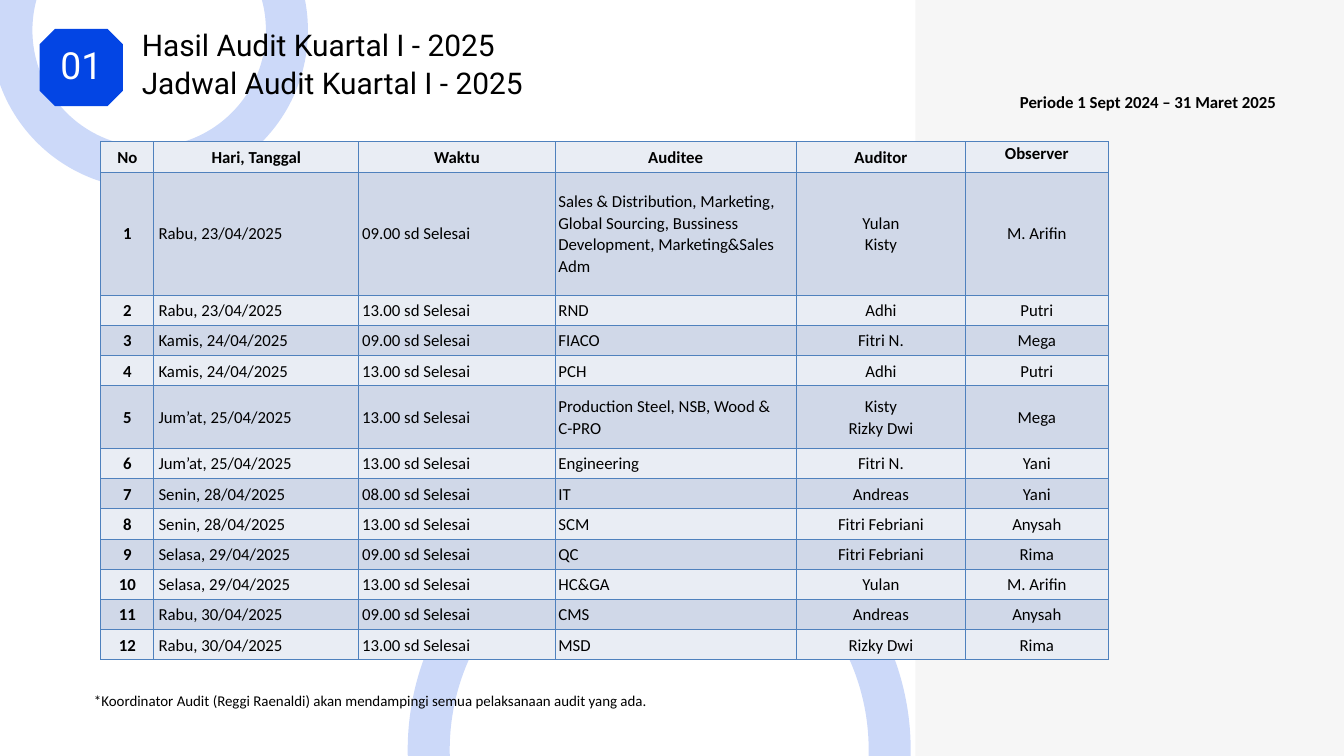
import pptx
import pptx.dml.color
import pptx.enum.shapes
import pptx.enum.text
import pptx.oxml
import pptx.oxml.ns
import pptx.util

COLUMNS, ROWS = 20, 11.25  # grid of one-inch cells

COLORS = {
    "blue": "0345E4",
    "panel": "F6F6F6",
    "white": "FFFFFF",
    "black": "000000",
    "border": "4F81BD",
    "light": "E9EDF4",
    "dark": "D0D8E8",
}
LEFT = pptx.enum.text.PP_ALIGN.LEFT
CENTER = pptx.enum.text.PP_ALIGN.CENTER
TOP = pptx.enum.text.MSO_ANCHOR.TOP
MIDDLE = pptx.enum.text.MSO_ANCHOR.MIDDLE
SHAPES = pptx.enum.shapes.MSO_SHAPE

HEADERS = ["No", "Hari, Tanggal", "Waktu", "Auditee", "Auditor", "Observer"]
SCHEDULE = [
    ("Rabu, 23/04/2025", "09.00",
     "Sales & Distribution, Marketing, Global Sourcing, Bussiness Development, Marketing&Sales Adm",
     "Yulan\nKisty", "M. Arifin"),
    ("Rabu, 23/04/2025", "13.00", "RND", "Adhi", "Putri"),
    ("Kamis, 24/04/2025", "09.00", "FIACO", "Fitri N.", "Mega"),
    ("Kamis, 24/04/2025", "13.00", "PCH", "Adhi", "Putri"),
    ("Jum’at, 25/04/2025", "13.00", "Production Steel, NSB, Wood &\nC-PRO",
     "Kisty\nRizky Dwi", "Mega"),
    ("Jum’at, 25/04/2025", "13.00", "Engineering", "Fitri N.", "Yani"),
    ("Senin, 28/04/2025", "08.00", "IT", "Andreas", "Yani"),
    ("Senin, 28/04/2025", "13.00", "SCM", "Fitri Febriani", "Anysah"),
    ("Selasa, 29/04/2025", "09.00", "QC", "Fitri Febriani", "Rima"),
    ("Selasa, 29/04/2025", "13.00", "HC&GA", "Yulan", "M. Arifin"),
    ("Rabu, 30/04/2025", "09.00", "CMS", "Andreas", "Anysah"),
    ("Rabu, 30/04/2025", "13.00", "MSD", "Rizky Dwi", "Rima"),
]
COLUMN_WIDTHS = [0.79, 3.05, 2.92, 3.59, 2.52, 2.12]
ROW_HEIGHT = 0.45
TALL_ROWS = {1: 1.83, 5: 0.93}


def rgb(name):
    return pptx.dml.color.RGBColor.from_string(COLORS[name])


class AuditSlide:
    def __init__(self, presentation):
        self.column = presentation.slide_width / COLUMNS
        self.row = presentation.slide_height / ROWS
        self.slide = presentation.slides.add_slide(presentation.slide_layouts[6])

    def across(self, columns):
        return round(columns * self.column)

    def down(self, rows):
        return round(rows * self.row)

    def box(self, left, top, width, height):
        return self.across(left), self.down(top), self.across(width), self.down(height)

    def shape(self, kind, *place, fill=None):
        shape = self.slide.shapes.add_shape(kind, *self.box(*place))
        shape.shadow.inherit = False
        shape.line.fill.background()
        if fill:
            shape.fill.solid()
            shape.fill.fore_color.rgb = rgb(fill)
        else:
            shape.fill.background()
        return shape

    def ring(self, *place):
        """Draw an unfilled circle with a thick, mostly transparent outline."""
        shape = self.shape(SHAPES.OVAL, *place)
        shape.line.color.rgb = rgb("blue")
        shape.line.width = pptx.util.Pt(45)
        color = shape.element.spPr.find(".//" + pptx.oxml.ns.qn("a:srgbClr"))
        color.append(pptx.oxml.parse_xml(
            f'<a:alpha {pptx.oxml.ns.nsdecls("a")} val="20000"/>'))

    def set_text(self, frame, text, size, font="Calibri", color="black", bold=False,
                 align=LEFT, spacing=None):
        frame.text = text
        frame.word_wrap = True
        for paragraph in frame.paragraphs:
            paragraph.alignment = align
            paragraph.line_spacing = spacing
            paragraph.font.name = font
            paragraph.font.size = pptx.util.Pt(size)
            paragraph.font.bold = bold
            paragraph.font.color.rgb = rgb(color)

    def inset(self, target, left, top, right, bottom):
        target.margin_left, target.margin_right = self.across(left), self.across(right)
        target.margin_top, target.margin_bottom = self.down(top), self.down(bottom)

    def text(self, words, *place, size, inset=(0.1, 0.05, 0.1, 0.05), anchor=TOP, **style):
        frame = self.slide.shapes.add_textbox(*self.box(*place)).text_frame
        self.inset(frame, *inset)
        frame.vertical_anchor = anchor
        self.set_text(frame, words, size, **style)

    def badge(self, number, *place):
        badge = self.shape(SHAPES.OCTAGON, *place, fill="blue")
        badge.adjustments[0] = 0.2
        frame = badge.text_frame
        self.inset(frame, 0.05, 0.05, 0.05, 0.12)
        frame.vertical_anchor = MIDDLE
        self.set_text(frame, number, 40, font="Roboto", color="white", align=CENTER,
                      spacing=pptx.util.Pt(47.6))

    def borders(self, cell):
        properties = cell._tc.get_or_add_tcPr()
        for index, side in enumerate("LRTB"):
            properties.insert(index, pptx.oxml.parse_xml(
                f'<a:ln{side} {pptx.oxml.ns.nsdecls("a")} w="12700"><a:solidFill>'
                f'<a:srgbClr val="{COLORS["border"]}"/></a:solidFill></a:ln{side}>'))

    def table(self, records, left, top):
        heights = [TALL_ROWS.get(index, ROW_HEIGHT) for index in range(len(records))]
        place = self.box(left, top, sum(COLUMN_WIDTHS), sum(heights))
        table = self.slide.shapes.add_table(len(records), len(COLUMN_WIDTHS), *place).table
        table.first_row = table.horz_banding = False
        for column, width in zip(table.columns, COLUMN_WIDTHS):
            column.width = self.across(width)
        for row_index, record in enumerate(records):
            table.rows[row_index].height = self.down(heights[row_index])
            for column_index, words in enumerate(record):
                self.cell(table.cell(row_index, column_index), words, row_index, column_index)

    def cell(self, cell, words, row_index, column_index):
        header = row_index == 0
        cell.fill.solid()
        cell.fill.fore_color.rgb = rgb("dark" if row_index % 2 else "light")
        self.borders(cell)
        indented = column_index == 1 and not header
        self.inset(cell, 0.07 if indented else 0.05, 0, 0.05, 0)
        cell.vertical_anchor = TOP if header and column_index == 5 else MIDDLE
        centered = header or column_index in (0, 4, 5)
        self.set_text(cell.text_frame, words, 18, bold=header or column_index == 0,
                      align=CENTER if centered else LEFT, spacing=1.07)


def main():
    presentation = pptx.Presentation()
    presentation.slide_width = pptx.util.Inches(20)
    presentation.slide_height = pptx.util.Inches(11.25)
    page = AuditSlide(presentation)

    page.shape(SHAPES.RECTANGLE, 13.62, 0, 6.38, ROWS, fill="panel")
    page.ring(0.17, -1.6, 4.1, 4.1)
    page.ring(6.38, 7.63, 6.86, 7.06)
    page.badge("01", 0.59, 0.43, 1.24, 1.15)
    for index, subject in enumerate(["Hasil", "Jadwal"]):
        page.text(f"{subject} Audit Kuartal I - 2025", 2.11, 0.45 + 0.56 * index, 17.29, 0.5,
                  size=32, font="Roboto", inset=(0, 0, 0, 0), spacing=pptx.util.Pt(35))

    records = [HEADERS] + [
        (str(number), day, f"{start} sd Selesai", *people)
        for number, (day, start, *people) in enumerate(SCHEDULE, 1)]
    page.table(records, 1.5, 2.11)

    page.text("Periode 1 Sept 2024 – 31 Maret 2025", 15, 1.31, 4.17, 0.4,
              size=18, bold=True, align=CENTER)
    page.text("*Koordinator Audit (Reggi Raenaldi) akan mendampingi semua pelaksanaan audit yang ada.",
              1.3, 10.24, 9.87, 0.37, size=16, anchor=MIDDLE)
    presentation.save("out.pptx")


if __name__ == "__main__":
    main()
